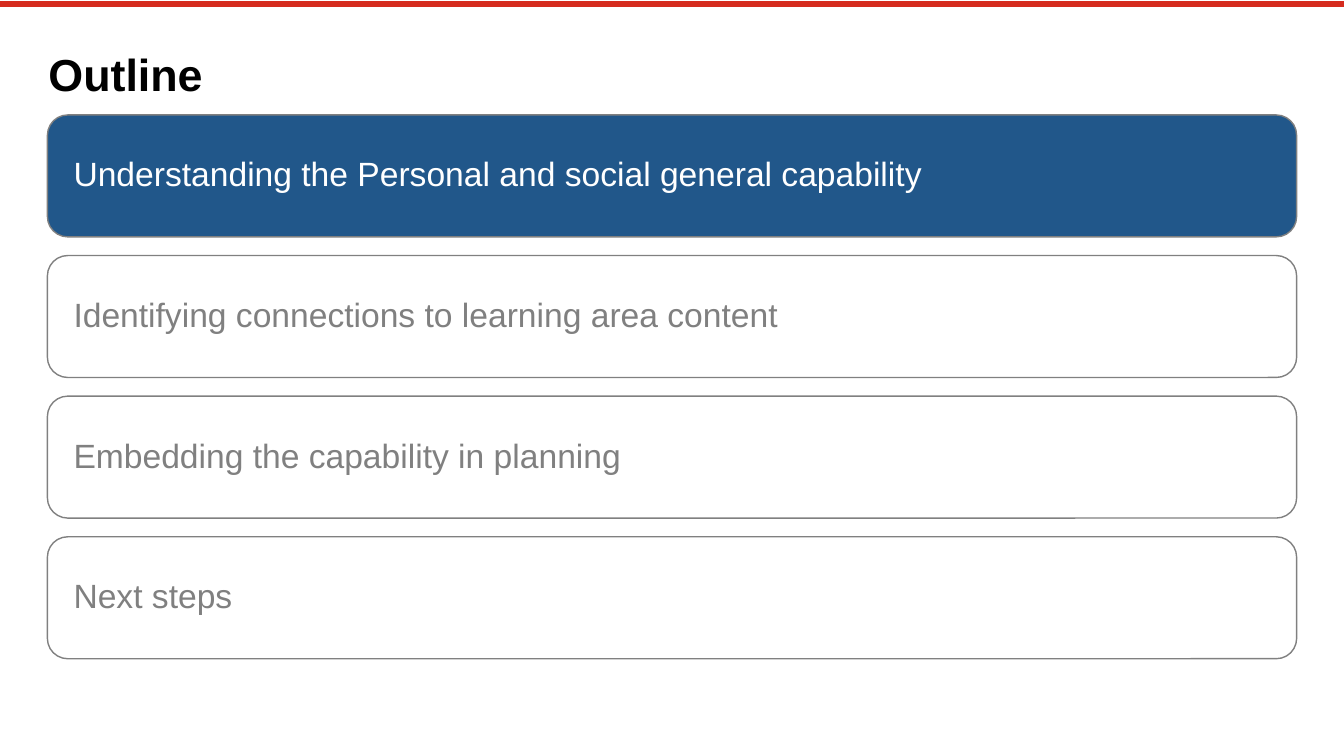
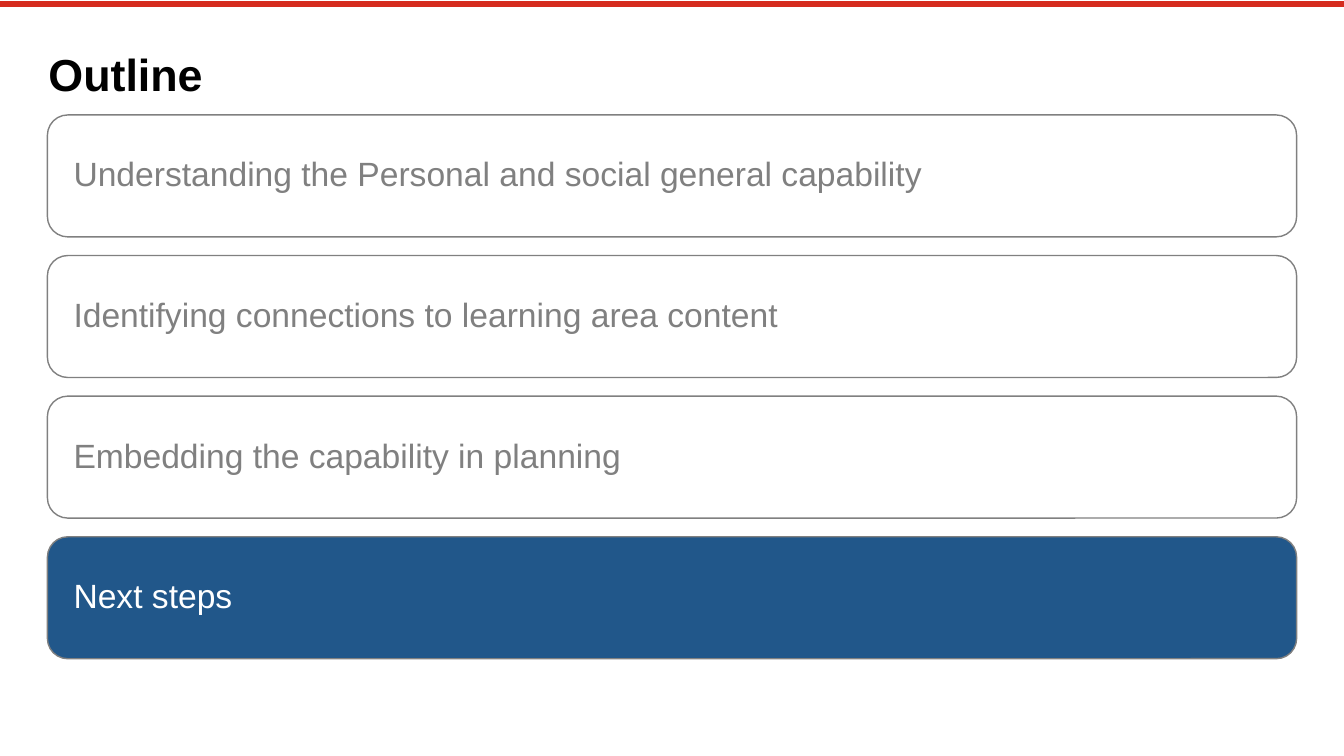
from lxml import etree
from pptx import Presentation
from pptx.dml.color import RGBColor
from pptx.enum.shapes import MSO_CONNECTOR, MSO_SHAPE
from pptx.enum.text import MSO_ANCHOR, MSO_AUTO_SIZE, PP_ALIGN
from pptx.oxml.ns import qn
from pptx.util import Inches, Pt

STRAIGHT = MSO_CONNECTOR.STRAIGHT
ROUNDED = MSO_SHAPE.ROUNDED_RECTANGLE
TOP, MIDDLE = MSO_ANCHOR.TOP, MSO_ANCHOR.MIDDLE
NO_FIT = MSO_AUTO_SIZE.NONE
LEFT = PP_ALIGN.LEFT

COLOURS = {
    "rule": "D52B1E",
    "active": "21578A",
    "muted": "808080",
    "white": "FFFFFF",
    "title": "000000",
}
TITLE_FRAME = {
    "margin_left": 0, "margin_top": Inches(0.06), "margin_right": 0, "margin_bottom": 0,
    "vertical_anchor": TOP, "auto_size": NO_FIT, "word_wrap": True,
}
TITLE_FONT = {"name": "Arial", "size": Pt(32), "bold": True}
TOPIC_FRAME = {
    "margin_left": Inches(0.2), "margin_top": Inches(0.1),
    "margin_right": Inches(0.1), "margin_bottom": Inches(0.1),
    "vertical_anchor": MIDDLE, "word_wrap": True,
}
TOPIC_FONT = {"name": "Arial", "size": Pt(24), "bold": False}

TOPICS = [
    "Understanding the Personal and social general capability",
    "Identifying connections to learning area content",
    "Embedding the capability in planning",
    "Next steps",
]
ACTIVE_TOPICS = [0, 3]
TOPIC_LEFT, TOPIC_TOP = 0.47, 1.14
TOPIC_WIDTH, TOPIC_HEIGHT = 12.39, 1.21
TOPIC_STEP = 1.395


def rgb(role):
    return RGBColor.from_string(COLOURS[role])


def write(shape, text, frame_format, font_format, colour):
    frame = shape.text_frame
    frame.text = text
    paragraph = frame.paragraphs[0]
    paragraph.alignment = LEFT
    for target, values in ((frame, frame_format), (paragraph.font, font_format)):
        for attribute, value in values.items():
            setattr(target, attribute, value)
    paragraph.font.color.rgb = rgb(colour)
    return paragraph


prs = Presentation()
prs.slide_width, prs.slide_height = Inches(13.33), Inches(7.5)
title_only = prs.slide_layouts[5]
slides = [prs.slides.add_slide(title_only) for _ in ACTIVE_TOPICS]

top_rule = slides[0].shapes.add_connector(
    STRAIGHT, Inches(0), Inches(0.04), Inches(13.33), Inches(0.04))
top_rule.line.color.rgb = rgb("rule")
top_rule.line.width = Pt(4.2)
etree.SubElement(top_rule.element.spPr, qn("a:effectLst"))
title_only.shapes.element.append(top_rule.element)

for slide, active in zip(slides, ACTIVE_TOPICS):
    title = slide.shapes.title
    title.left, title.top = Inches(0.48), Inches(0.4)
    title.width, title.height = Inches(12.39), Inches(0.52)
    write(title, "Outline", TITLE_FRAME, TITLE_FONT, "title")

    for index, topic in enumerate(TOPICS):
        fill, ink = ("active", "white") if index == active else ("white", "muted")
        panel = slide.shapes.add_shape(
            ROUNDED, Inches(TOPIC_LEFT), Inches(TOPIC_TOP + index * TOPIC_STEP),
            Inches(TOPIC_WIDTH), Inches(TOPIC_HEIGHT))
        panel.shadow.inherit = False
        panel.fill.solid()
        panel.fill.fore_color.rgb = rgb(fill)
        panel.line.color.rgb = rgb("muted")
        panel.line.width = Pt(1)
        label = write(panel, topic, TOPIC_FRAME, TOPIC_FONT, ink)
        label.line_spacing = 0.9

prs.save("out.pptx")
